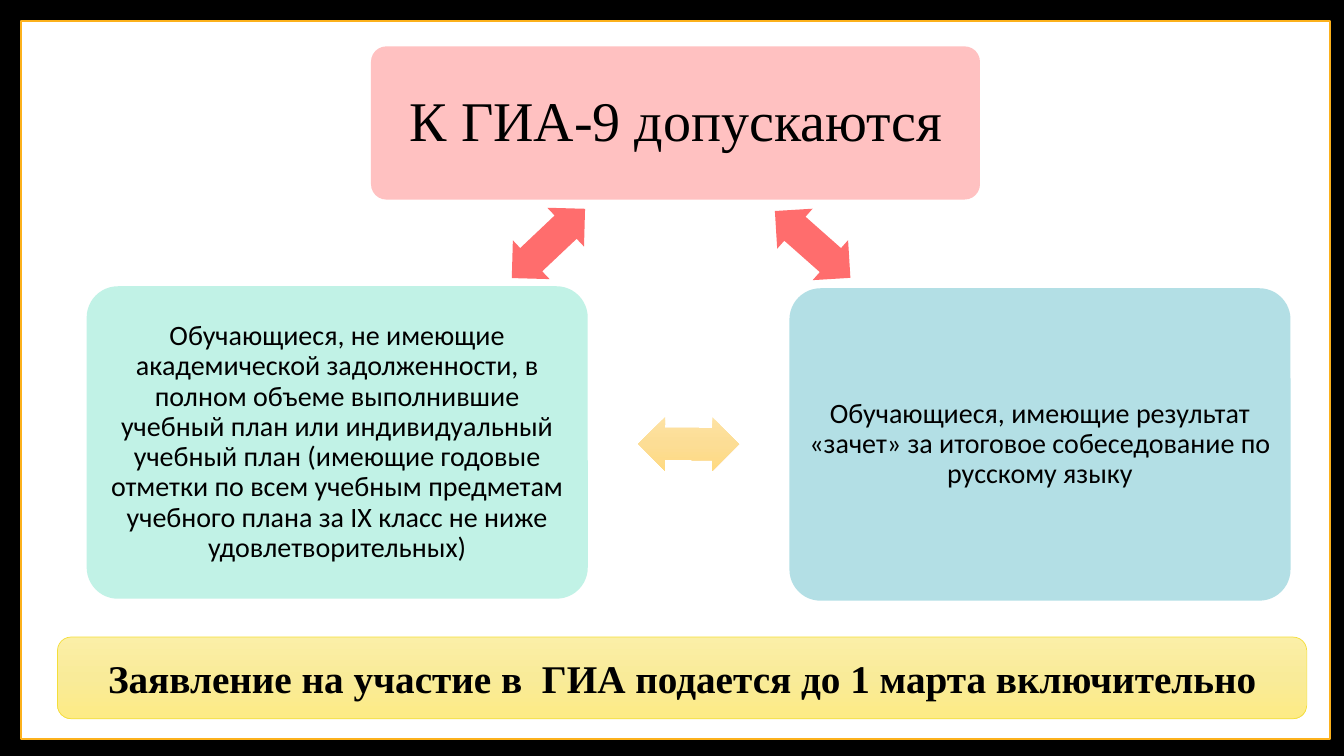
from dataclasses import dataclass

from lxml import etree
from pptx import Presentation
from pptx.dml.color import RGBColor
from pptx.enum import shapes, text
from pptx.oxml import ns
from pptx.util import Inches, Pt

BLACK = RGBColor(0x00, 0x00, 0x00)
WHITE = RGBColor(0xFF, 0xFF, 0xFF)
ORANGE = RGBColor(0xFC, 0xB1, 0x1C)
PINK = RGBColor(0xFF, 0xC1, 0xC1)
RED = RGBColor(0xFF, 0x6D, 0x6D)
BLUE = RGBColor(0xB3, 0xDF, 0xE5)
MINT = RGBColor(0xC1, 0xF2, 0xE6)
YELLOW = RGBColor(0xF4, 0xDE, 0x3A)
AMBER_FADE = (RGBColor(0xFE, 0xE3, 0xA4), RGBColor(0xFC, 0xDD, 0x95), RGBColor(0xFF, 0xDA, 0x81))
YELLOW_FADE = (RGBColor(0xFB, 0xEF, 0xA7), RGBColor(0xF9, 0xEB, 0x99), RGBColor(0xFD, 0xEB, 0x85))

Fill = RGBColor | tuple[RGBColor, ...]
SERIF = "Times New Roman"
SANS = "Calibri"
RECT = shapes.MSO_SHAPE.RECTANGLE
ROUNDED = shapes.MSO_SHAPE.ROUNDED_RECTANGLE
ARROW = shapes.MSO_SHAPE.LEFT_RIGHT_ARROW


@dataclass(frozen=True)
class Condition:
    left: float
    top: float
    fill: RGBColor
    wording: str


@dataclass(frozen=True)
class Arrow:
    left: float
    top: float
    angle: float
    fill: Fill


CONDITIONS = (
    Condition(7.83, 2.86, BLUE, "Обучающиеся, имеющие результат «зачет» за итоговое "
              "собеседование по русскому языку"),
    Condition(0.86, 2.84, MINT, "Обучающиеся, не имеющие академической задолженности, в полном "
              "объеме выполнившие учебный план или индивидуальный учебный план (имеющие годовые "
              "отметки по всем учебным предметам учебного плана за IX класс не ниже "
              "удовлетворительных)"),
)
ARROWS = (
    Arrow(7.56, 2.16, 41.5, RED),
    Arrow(6.33, 4.14, 0.2, AMBER_FADE),
    Arrow(4.94, 2.15, 316.6, RED),
)


def paint(sp, fill: Fill) -> None:
    """Fill with one colour, or fade evenly from top to bottom through several."""
    if isinstance(fill, RGBColor):
        sp.fill.solid()
        sp.fill.fore_color.rgb = fill
        return
    sp.fill.gradient()
    sp.fill.gradient_angle = 270
    stops = sp._element.spPr.find(f".//{ns.qn('a:gsLst')}")
    for stop in list(stops):
        stops.remove(stop)
    for i, color in enumerate(fill):
        stop = etree.SubElement(stops, ns.qn("a:gs"), pos=str(i * 100000 // (len(fill) - 1)))
        etree.SubElement(stop, ns.qn("a:srgbClr"), val=str(color))


def add_shape(s, kind, left: float, top: float, width: float, height: float, fill: Fill,
              line: RGBColor | None = None, line_width: float = 1,
              adjustments: tuple[float, ...] = ()):
    sp = s.shapes.add_shape(kind, Inches(left), Inches(top), Inches(width), Inches(height))
    sp.shadow.inherit = False
    for i, value in enumerate(adjustments):
        sp.adjustments[i] = value
    paint(sp, fill)
    if line is None:
        sp.line.fill.background()
    else:
        sp.line.color.rgb = line
        sp.line.width = Pt(line_width)
    return sp


def write(sp, wording: str, *, size: float, font: str, bold: bool = False,
          spacing: float = 1.0, inset: float | None = None) -> None:
    tf = sp.text_frame
    tf.word_wrap = True
    tf.auto_size = text.MSO_AUTO_SIZE.NONE
    tf.vertical_anchor = text.MSO_ANCHOR.MIDDLE
    if inset is not None:
        tf.margin_left = tf.margin_top = tf.margin_right = tf.margin_bottom = Inches(inset)
    p = tf.paragraphs[0]
    p.alignment = text.PP_ALIGN.CENTER
    p.line_spacing = spacing
    p.space_before = Pt(0)
    r = p.add_run()
    r.text = wording
    r.font.name = font
    r.font.size = Pt(size)
    r.font.bold = bold
    r.font.color.rgb = BLACK


def add_heading(s) -> None:
    add_shape(s, ROUNDED, 3.68, 0.46, 6.04, 1.52, PINK, adjustments=(0.1,))
    title = s.shapes.title
    title.left, title.top = Inches(3.73), Inches(0.51)
    title.width, title.height = Inches(5.95), Inches(1.43)
    write(title, "К ГИА-9 допускаются", size=40, font=SERIF, spacing=0.9, inset=0.17)
    s.shapes._spTree.append(title._element)  # bring the title in front of its panel


def main() -> None:
    prs = Presentation()
    prs.slide_width, prs.slide_height = Inches(13.33), Inches(7.5)
    s = prs.slides.add_slide(prs.slide_layouts[5])
    s.background.fill.solid()
    s.background.fill.fore_color.rgb = BLACK

    add_shape(s, RECT, 0.21, 0.21, 12.98, 7.12, WHITE, line=ORANGE)
    add_heading(s)
    for c in CONDITIONS:
        sp = add_shape(s, ROUNDED, c.left, c.top, 4.97, 3.1, c.fill, adjustments=(0.1,))
        write(sp, c.wording, size=20, font=SANS, spacing=0.9, inset=0.08)
    for a in ARROWS:
        sp = add_shape(s, ARROW, a.left, a.top, 1, 0.53, a.fill, adjustments=(0.6, 0.5))
        sp.rotation = a.angle
    banner = add_shape(s, ROUNDED, 0.57, 6.32, 12.39, 0.81, YELLOW_FADE,
                       line=YELLOW, line_width=0.5)
    write(banner, "Заявление на участие в  ГИА подается до 1 марта включительно",
          size=28, font=SERIF, bold=True)
    prs.save("out.pptx")


if __name__ == "__main__":
    main()
